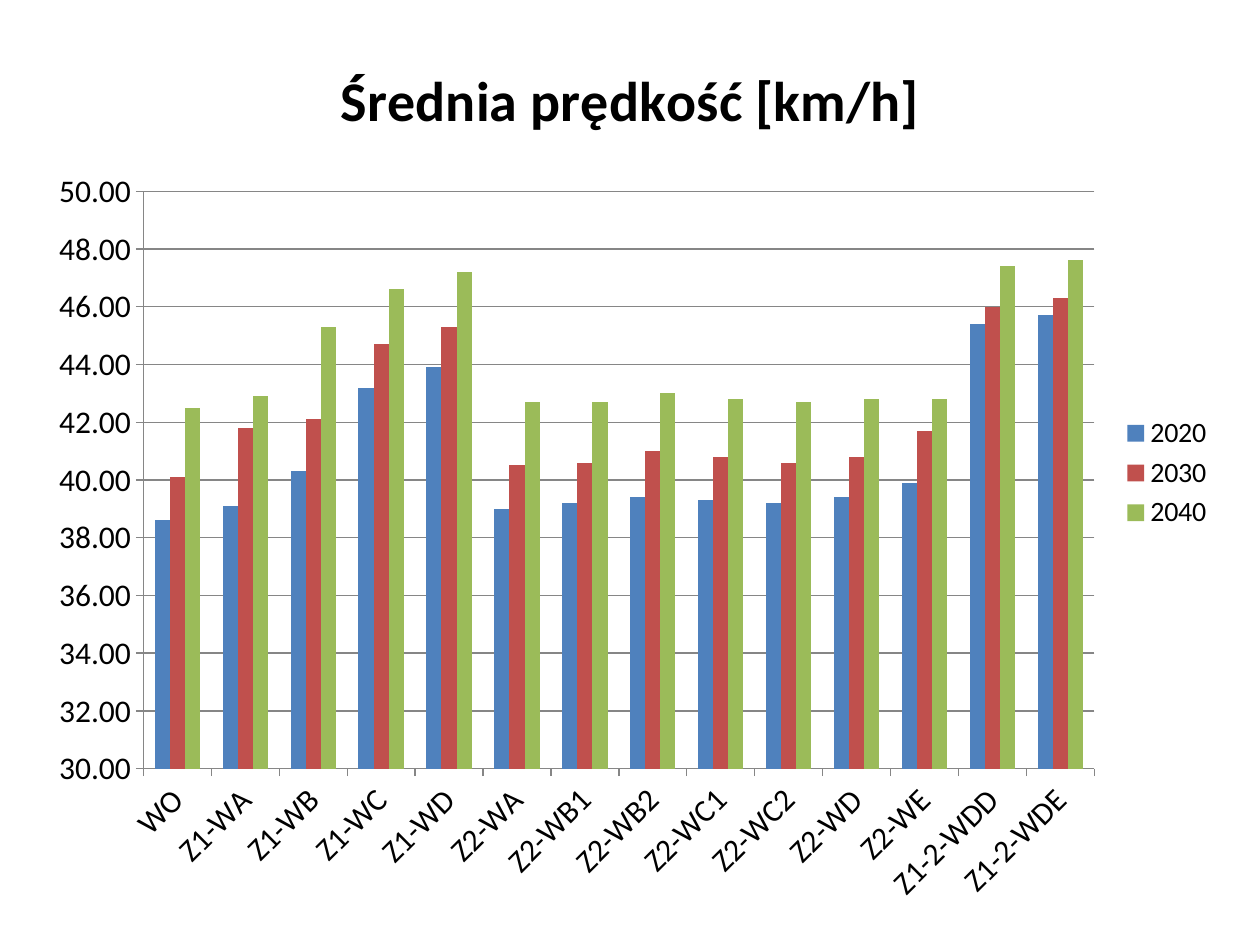
from dataclasses import dataclass

from pptx import Presentation
from pptx.chart.data import CategoryChartData
from pptx.dml.color import RGBColor
from pptx.enum.chart import XL_CHART_TYPE, XL_LEGEND_POSITION, XL_TICK_MARK
from pptx.util import Inches, Pt

CLUSTERED = XL_CHART_TYPE.COLUMN_CLUSTERED
LEGEND_RIGHT = XL_LEGEND_POSITION.RIGHT
TICK_OUTSIDE = XL_TICK_MARK.OUTSIDE
TICK_NONE = XL_TICK_MARK.NONE


@dataclass(frozen=True)
class Theme:
    font: str = "Calibri"
    text: str = "000000"
    line: str = "868686"
    series: tuple = ("4F81BD", "C0504D", "9BBB59")
    title_size: int = 32
    axis_size: int = 18
    legend_size: int = 16
    base_size: int = 10


THEME = Theme()
TITLE = "Średnia prędkość [km/h]"
VARIANTS = ["WO", "Z1-WA", "Z1-WB", "Z1-WC", "Z1-WD", "Z2-WA", "Z2-WB1",
            "Z2-WB2", "Z2-WC1", "Z2-WC2", "Z2-WD", "Z2-WE", "Z1-2-WDD",
            "Z1-2-WDE"]
SPEEDS = {
    "2020": [38.6, 39.1, 40.3, 43.2, 43.9, 39, 39.2, 39.4, 39.3, 39.2, 39.4,
             39.9, 45.4, 45.7],
    "2030": [40.1, 41.8, 42.1, 44.7, 45.3, 40.5, 40.6, 41, 40.8, 40.6, 40.8,
             41.7, 46, 46.3],
    "2040": [42.5, 42.9, 45.3, 46.6, 47.2, 42.7, 42.7, 43, 42.8, 42.7, 42.8,
             42.8, 47.4, 47.6],
}


def style_font(font, size, bold=False):
    font.name = THEME.font
    font.size = Pt(size)
    font.bold = bold
    font.color.rgb = RGBColor.from_string(THEME.text)


def style_line(line):
    line.color.rgb = RGBColor.from_string(THEME.line)
    line.width = Pt(0.75)


def style_title(chart):
    chart.has_title = True
    frame = chart.chart_title.text_frame
    frame.text = TITLE
    style_font(frame.paragraphs[0].runs[0].font, THEME.title_size, bold=True)
    chart.chart_title.include_in_layout = False


def style_axes(chart):
    for axis in (chart.category_axis, chart.value_axis):
        style_font(axis.tick_labels.font, THEME.axis_size)
        style_line(axis.format.line)
        axis.major_tick_mark = TICK_OUTSIDE
        axis.minor_tick_mark = TICK_NONE
    labels = chart.category_axis._element.txPr
    labels.bodyPr.set("rot", "-2700000")
    speed_axis = chart.value_axis
    speed_axis.minimum_scale = 30
    speed_axis.maximum_scale = 50
    speed_axis.major_unit = 2
    speed_axis.has_major_gridlines = True
    style_line(speed_axis.major_gridlines.format.line)
    speed_axis.tick_labels.number_format = "0.00"
    speed_axis.tick_labels.number_format_is_linked = False


def style_legend(chart):
    chart.has_legend = True
    chart.legend.position = LEGEND_RIGHT
    chart.legend.include_in_layout = False
    style_font(chart.legend.font, THEME.legend_size)


def add_speed_chart(page, left, top, width, height):
    data = CategoryChartData(number_format="0.00")
    data.categories = VARIANTS
    for year, speeds in SPEEDS.items():
        data.add_series(year, speeds)
    chart = page.shapes.add_chart(CLUSTERED, left, top, width, height, data).chart
    style_font(chart.font, THEME.base_size)
    style_title(chart)
    style_axes(chart)
    style_legend(chart)
    plot = chart.plots[0]
    plot.gap_width = 150
    plot.overlap = 0
    plot.vary_by_categories = False
    for series, color in zip(plot.series, THEME.series):
        series.format.fill.solid()
        series.format.fill.fore_color.rgb = RGBColor.from_string(color)
        series.invert_if_negative = False


def main():
    deck = Presentation()
    deck.slide_width = Inches(10)
    deck.slide_height = Inches(7.5)
    page = deck.slides.add_slide(deck.slide_layouts[6])
    add_speed_chart(page, Inches(0.28), Inches(0.21), Inches(9.45), Inches(7.09))
    deck.save("out.pptx")


if __name__ == "__main__":
    main()
